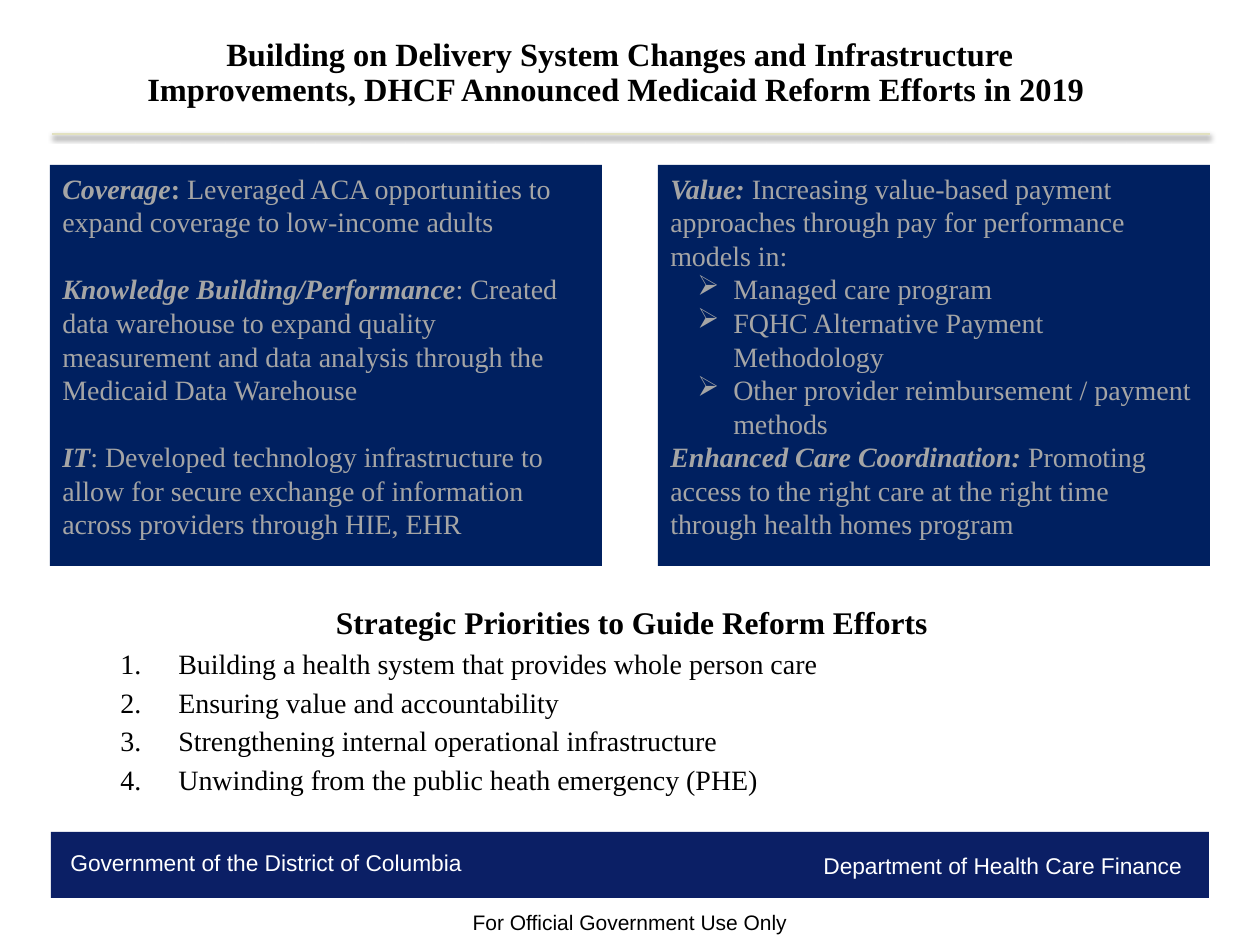
from lxml.etree import SubElement as Sub
from pptx import Presentation
from pptx.dml.color import RGBColor
from pptx.enum.shapes import MSO_CONNECTOR as Link, MSO_SHAPE as Kind
from pptx.enum.text import MSO_ANCHOR as Anchor, MSO_AUTO_SIZE as Fit, PP_ALIGN as Align
from pptx.oxml.ns import qn
from pptx.util import Pt

PX = 914400 / 126
SERIF, SANS = "Times New Roman", "Arial"
WHITE, BLACK, GREY = "FFFFFF", "000000", "A5A5A5"
NAVY, BAND, RULE = "002060", "0B1F65", "E2E1C0"


def px(*nums):
    return [round(n * PX) for n in nums]


def color(text):
    return RGBColor.from_string(text)


class Page:
    """Holds the style and the current slide."""

    def __init__(self, deck):
        self.slide = deck.slides.add_slide(deck.slide_layouts[5])
        self.shapes = self.slide.shapes

    def bullet(self, par, mark, left, hang):
        prop = par._p.get_or_add_pPr()
        prop.set("marL", str(px(left)[0]))
        prop.set("indent", str(px(-hang)[0]))
        if mark == "1.":
            Sub(prop, qn("a:buAutoNum"), type="arabicPeriod")
        else:
            Sub(prop, qn("a:buChar"), char=mark)

    def fill_in(self, shape, pars, size, hue, font=SERIF, anchor=Anchor.TOP, **base):
        """Each paragraph is (runs, format); each run is (text, style letters)."""
        frame = shape.text_frame
        for key, val in dict(word_wrap=True, auto_size=Fit.NONE,
                             vertical_anchor=anchor).items():
            setattr(frame, key, val)
        for num, (runs, form) in enumerate(pars):
            par = frame.paragraphs[0] if num == 0 else frame.add_paragraph()
            form = {"alignment": Align.LEFT, "space_before": Pt(0), **base, **form}
            mark = form.pop("mark", None)
            big = form.pop("size", size)
            if mark:
                self.bullet(par, *mark)
            for key, val in form.items():
                setattr(par, key, val)
            for text, style in runs:
                run = par.add_run()
                run.text = text
                look = dict(name=font, size=Pt(big), bold="b" in style, italic="i" in style)
                for key, val in look.items():
                    setattr(run.font, key, val)
                run.font.color.rgb = color(hue)

    def title(self, box, text, size):
        head = self.shapes.title
        head.left, head.top, head.width, head.height = px(*box)
        self.fill_in(head, [([(text, "b")], {})], size, BLACK, anchor=Anchor.MIDDLE,
                     alignment=Align.CENTER, line_spacing=0.9)

    def text(self, box, pars, size, hue, **base):
        self.fill_in(self.shapes.add_textbox(*px(*box)), pars, size, hue, **base)

    def label(self, box, text, size, hue, **base):
        self.text(box, [([(text, "")], {})], size, hue, font=SANS, **base)

    def block(self, box, fill):
        rect = self.shapes.add_shape(Kind.RECTANGLE, *px(*box))
        rect.shadow.inherit = False
        rect.fill.solid()
        rect.fill.fore_color.rgb = color(fill)
        rect.line.fill.background()
        return rect

    def panel(self, box, pars):
        self.fill_in(self.block(box, NAVY), pars, 16, GREY)

    def rule(self, left, right, top):
        line = self.shapes.add_connector(Link.STRAIGHT, *px(left, top, right, top))
        line.line.color.rgb = color(RULE)
        line.line.width = Pt(1.5)
        glow = Sub(Sub(line._element.spPr, qn("a:effectLst")), qn("a:outerShdw"),
                   blurRad=str(Pt(3.1)), dist=str(Pt(1.6)), dir="5400000",
                   algn="t", rotWithShape="0")
        Sub(Sub(glow, qn("a:srgbClr"), val=BLACK), qn("a:alpha"), val="38000")


def main():
    deck = Presentation()
    deck.slide_width, deck.slide_height = px(1260, 945)
    page = Page(deck)

    # Header
    page.title((121, 33, 997, 82),
               "Building on Delivery System Changes and Infrastructure "
               "Improvements, DHCF Announced Medicaid Reform Efforts in 2019 ", 18.5)
    page.rule(52, 1210, 134)

    # Past work, one panel on each side
    gap = {"space_before": Pt(19.2)}
    done = [
        ([("Coverage", "bi"), (": ", "b"),
          ("Leveraged ACA opportunities to expand coverage to low-income adults", "")], {}),
        ([("Knowledge Building/Performance", "bi"),
          (": Created data warehouse to expand quality measurement and data analysis "
           "through the Medicaid Data Warehouse", "")], gap),
        ([("IT", "bi"),
          (": Developed technology infrastructure to allow for secure exchange of "
           "information across providers through HIE, EHR", "")], gap),
    ]
    models = ["Managed care program", "FQHC Alternative Payment Methodology",
              "Other provider reimbursement / payment methods"]
    value = [
        ([("Value: ", "bi"),
          ("Increasing value-based payment approaches through pay for performance "
           "models in:", "")], {}),
        *[([(item, "")], {"mark": ("➢", 63, 36), "level": 2}) for item in models],
        ([("Enhanced Care Coordination: ", "bi"),
          ("Promoting access to the right care at the right time through health homes "
           "program", "")], {}),
    ]
    for left, pars in ((50, done), (658, value)):
        page.panel((left, 165, 552, 401), pars)

    # Priorities
    goals = ["Building a health system that provides whole person care",
             "Ensuring value and accountability",
             "Strengthening internal operational infrastructure",
             "Unwinding from the public heath emergency (PHE)"]
    form = {"mark": ("1.", 116, 58), "level": 1, "space_before": Pt(5)}
    page.text((50, 601, 1164, 231), [
        ([("Strategic Priorities to Guide Reform Efforts", "b")],
         {"size": 18, "alignment": Align.CENTER}),
        *[([(goal, "")], form) for goal in goals],
    ], 16, BLACK, line_spacing=0.9)

    # Footer
    page.block((51, 832, 1158, 66), BAND)
    page.label((58, 843, 449, 40), "Government of the District of Columbia", 13, WHITE)
    page.label((811, 846, 392, 40), "Department of Health Care Finance", 13, WHITE)
    page.label((0, 903, 1260, 38), "For Official Government Use Only", 12, BLACK,
               alignment=Align.CENTER)

    deck.save("out.pptx")


if __name__ == "__main__":
    main()
